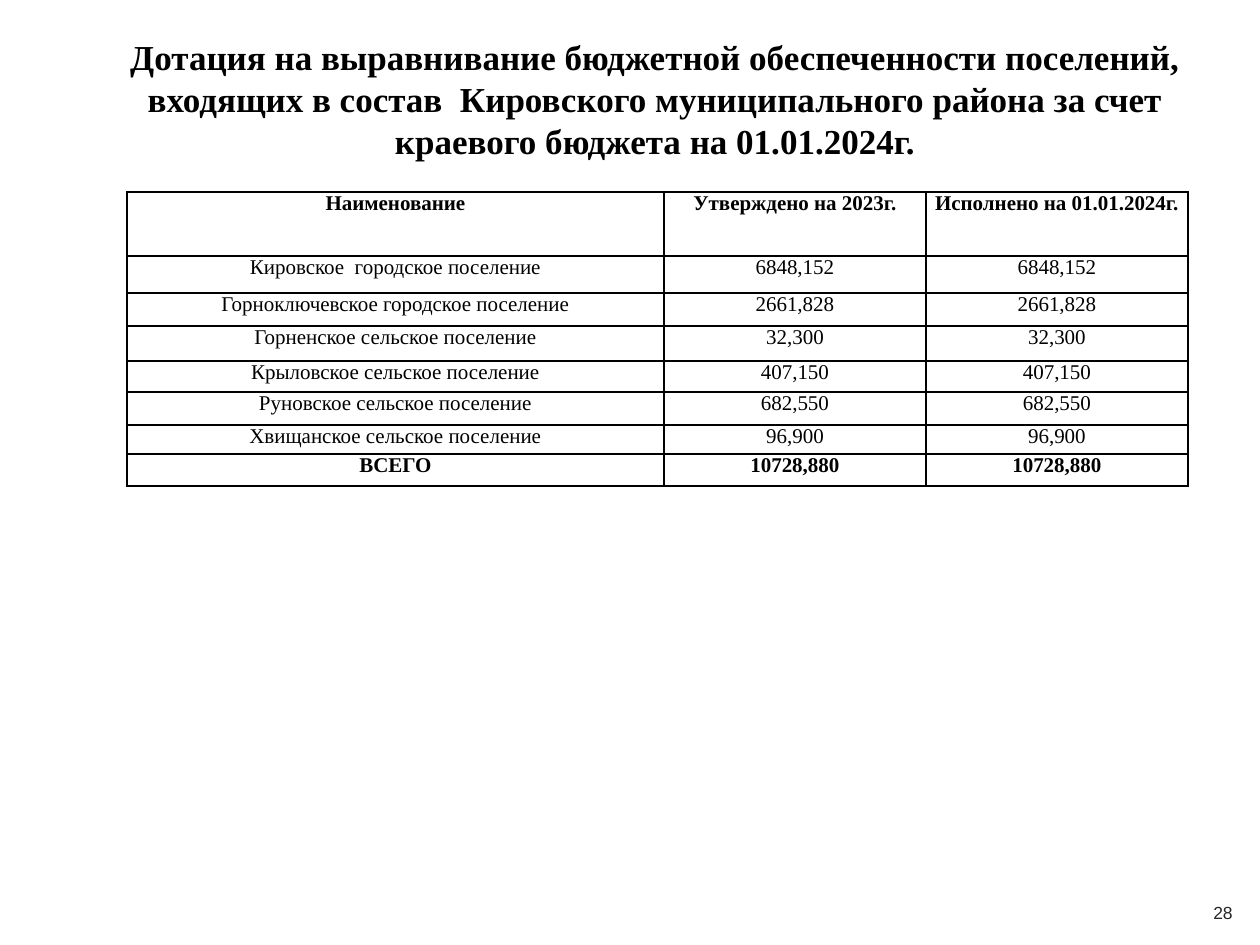
from lxml import etree
from pptx import Presentation
from pptx.dml.color import RGBColor
from pptx.enum.text import MSO_ANCHOR, PP_ALIGN
from pptx.oxml.ns import qn
from pptx.util import Emu, Pt

PX = 914400 // 126
CENTER = PP_ALIGN.CENTER
MIDDLE = MSO_ANCHOR.MIDDLE
TOP = MSO_ANCHOR.TOP
SERIF, SANS = "Times New Roman", "Arial"
BLACK, GRAY = "000000", "262626"


def px(length):
    return Emu(length * PX)


def color(value):
    return RGBColor.from_string(value)


class SlideBuilder:
    """Holds the text style and the current slide."""

    def __init__(self, slide):
        self.slide = slide

    def set_text(self, frame, text, size, font=SERIF, ink=BLACK, bold=False):
        frame.text = text
        paragraph = frame.paragraphs[0]
        paragraph.alignment = CENTER
        for run in paragraph.runs:
            run.font.name = font
            run.font.size = Pt(size)
            run.font.bold = bold
            run.font.color.rgb = color(ink)
        return paragraph

    def text(self, left, top, width, height, text, size, **style):
        box = self.slide.shapes.add_textbox(px(left), px(top), px(width), px(height))
        frame = box.text_frame
        frame.word_wrap = True
        frame.vertical_anchor = MIDDLE
        return self.set_text(frame, text, size, **style)

    def border(self, cell):
        properties = cell._tc.get_or_add_tcPr()
        for position, side in enumerate(("a:lnL", "a:lnR", "a:lnT", "a:lnB")):
            line = etree.Element(qn(side), w=str(Pt(1)))
            fill = etree.SubElement(line, qn("a:solidFill"))
            etree.SubElement(fill, qn("a:srgbClr"), val=BLACK)
            properties.insert(position, line)

    def table(self, left, top, widths, heights, rows, bold_rows):
        table = self.slide.shapes.add_table(
            len(rows), len(widths), px(left), px(top), px(sum(widths)), px(sum(heights))
        ).table
        for column, width in zip(table.columns, widths):
            column.width = px(width)
        for number, (row, height) in enumerate(zip(rows, heights)):
            table.rows[number].height = px(height)
            for cell, value in zip(table.rows[number].cells, row):
                cell.margin_left = cell.margin_right = px(9)
                cell.margin_top = cell.margin_bottom = 0
                cell.vertical_anchor = TOP
                cell.fill.background()
                self.border(cell)
                self.set_text(cell.text_frame, value, 12, bold=number in bold_rows)


def main():
    deck = Presentation()
    deck.slide_width, deck.slide_height = px(1260), px(945)
    builder = SlideBuilder(deck.slides.add_slide(deck.slide_layouts[6]))

    # Title
    title = builder.text(
        81, 53, 1148, 91,
        "Дотация на выравнивание бюджетной обеспеченности поселений, "
        "входящих в состав  Кировского муниципального района за счет "
        "краевого бюджета на 01.01.2024г.",
        20, bold=True)
    title.line_spacing = Pt(24)

    # Page number
    builder.text(1191, 888, 64, 50, "28", 10, font=SANS, ink=GRAY)

    # Grants by settlement: approved and executed amounts are equal
    grants = [
        ("Кировское  городское поселение", "6848,152"),
        ("Горноключевское городское поселение", "2661,828"),
        ("Горненское сельское поселение", "32,300"),
        ("Крыловское сельское поселение", "407,150"),
        ("Руновское сельское поселение", "682,550"),
        ("Хвищанское сельское поселение", "96,900"),
        ("ВСЕГО", "10728,880"),
    ]
    rows = [("Наименование", "Утверждено на 2023г.", "Исполнено на 01.01.2024г.")]
    rows += [(name, amount, amount) for name, amount in grants]
    builder.table(127, 192, [537, 262, 262], [64, 37, 33, 35, 31, 33, 29, 32],
                  rows, bold_rows=(0, len(grants)))

    deck.save("out.pptx")


if __name__ == "__main__":
    main()
